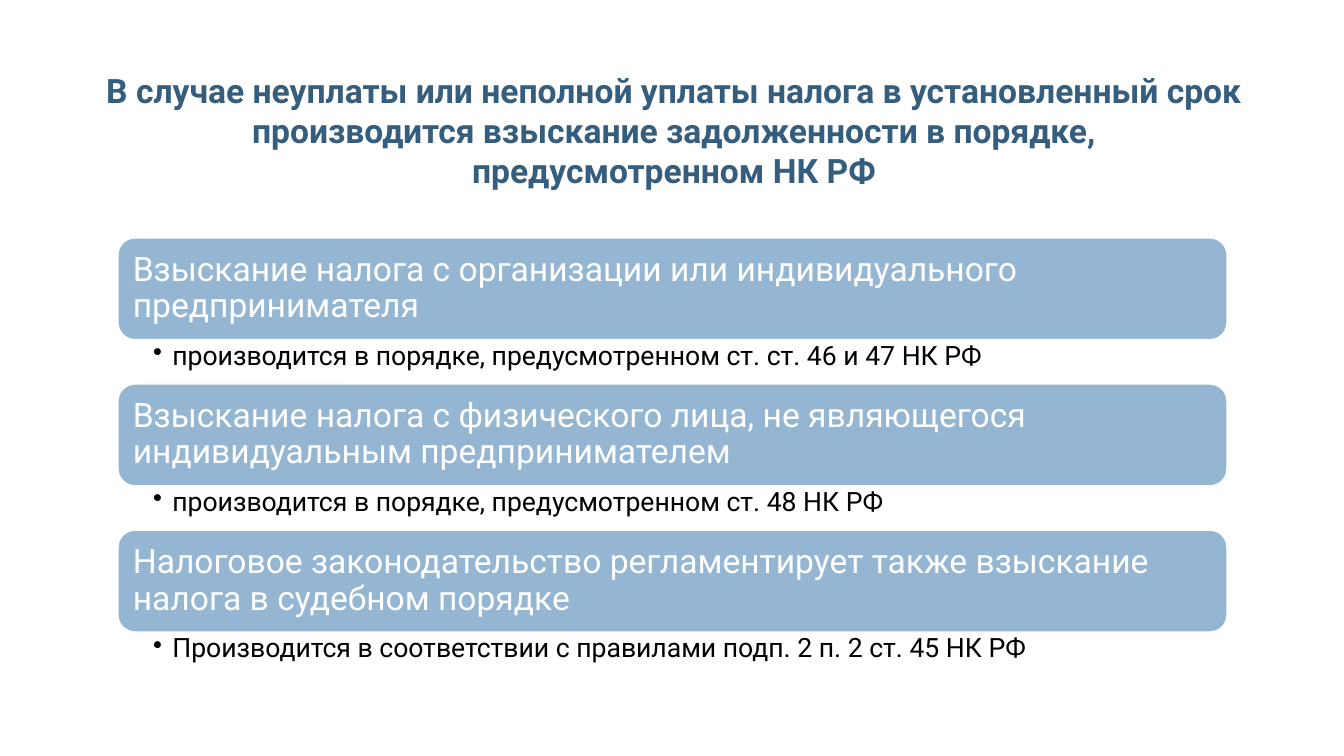
import pptx
import pptx.dml.color
import pptx.enum.shapes
import pptx.enum.text
import pptx.oxml.ns
import pptx.util
from lxml import etree

Inches = pptx.util.Inches
ALIGN = pptx.enum.text.PP_ALIGN
ANCHOR = pptx.enum.text.MSO_ANCHOR

COLORS = {"title": "355D7E", "bar": "94B6D2", "white": "FFFFFF", "detail": "000000"}

TITLE = ("В случае неуплаты или неполной уплаты налога в установленный срок "
         "производится взыскание задолженности в порядке, предусмотренном НК РФ")
PROCEDURES = [
    ("Взыскание налога с организации или индивидуального предпринимателя",
     "производится в порядке, предусмотренном ст. ст. 46 и 47 НК РФ"),
    ("Взыскание налога с физического лица, не являющегося индивидуальным предпринимателем",
     "производится в порядке, предусмотренном ст. 48 НК РФ"),
    ("Налоговое законодательство регламентирует также взыскание налога в судебном порядке",
     "Производится в соответствии с правилами подп. 2 п. 2 ст. 45 НК РФ"),
]


def rgb(name):
    return pptx.dml.color.RGBColor.from_string(COLORS[name])


def write_text(shape, text, *, size, color, font="Roboto", bold=False, align=ALIGN.LEFT,
               anchor=ANCHOR.TOP, spacing=1.0, insets=(0.1, 0.05, 0.1, 0.05), bullet_indent=None):
    frame = shape.text_frame
    frame.word_wrap = True
    frame.auto_size = pptx.enum.text.MSO_AUTO_SIZE.NONE
    frame.vertical_anchor = anchor
    (frame.margin_left, frame.margin_top,
     frame.margin_right, frame.margin_bottom) = map(Inches, insets)
    paragraph = frame.paragraphs[0]
    paragraph.text = text
    paragraph.alignment = align
    paragraph.line_spacing = spacing
    paragraph.space_before = pptx.util.Pt(0)
    if bullet_indent:
        properties = paragraph._p.get_or_add_pPr()
        properties.set("marL", str(Inches(bullet_indent)))
        properties.set("indent", str(-Inches(bullet_indent)))
        bullet = etree.SubElement(properties, pptx.oxml.ns.qn("a:buChar"))
        bullet.set("char", "•")
    run_font = paragraph.runs[0].font
    run_font.name = font
    run_font.size = pptx.util.Pt(size)
    run_font.bold = bold
    run_font.color.rgb = rgb(color)


class SlideBuilder:
    left, width = 1.17, 11

    def __init__(self, slide):
        self.slide = slide

    def title(self, text):
        shape = self.slide.shapes.title
        shape.left, shape.top = Inches(0.93), Inches(0.64)
        shape.width, shape.height = Inches(11.51), Inches(1.31)
        write_text(shape, text, size=24, color="title", bold=True, align=ALIGN.CENTER)

    def bar(self, text, top, height):
        shape = self.slide.shapes.add_shape(
            pptx.enum.shapes.MSO_SHAPE.ROUNDED_RECTANGLE,
            Inches(self.left), Inches(top), Inches(self.width), Inches(height))
        shape.shadow.inherit = False
        shape.fill.solid()
        shape.fill.fore_color.rgb = rgb("bar")
        shape.line.color.rgb = rgb("white")
        shape.line.width = pptx.util.Pt(1)
        write_text(shape, text, size=24, color="white", anchor=ANCHOR.MIDDLE,
                   spacing=0.9, insets=(0.1, 0.1, 0.1, 0.1))

    def detail(self, text, top, height):
        shape = self.slide.shapes.add_textbox(
            Inches(self.left), Inches(top), Inches(self.width), Inches(height))
        write_text(shape, text, size=19, color="detail", spacing=0.9,
                   insets=(0.35, 0.03, 0.19, 0.03), bullet_indent=0.19)


def main():
    presentation = pptx.Presentation()
    presentation.slide_width = Inches(13.33)
    presentation.slide_height = Inches(7.5)
    builder = SlideBuilder(presentation.slides.add_slide(presentation.slide_layouts[5]))
    builder.title(TITLE)
    first_top, bar_height, detail_height, pitch = 2.36, 1.01, 0.43, 1.45
    for index, (heading, detail) in enumerate(PROCEDURES):
        top = first_top + index * pitch
        builder.bar(heading, top, bar_height)
        builder.detail(detail, top + bar_height, detail_height)
    presentation.save("out.pptx")


if __name__ == "__main__":
    main()
